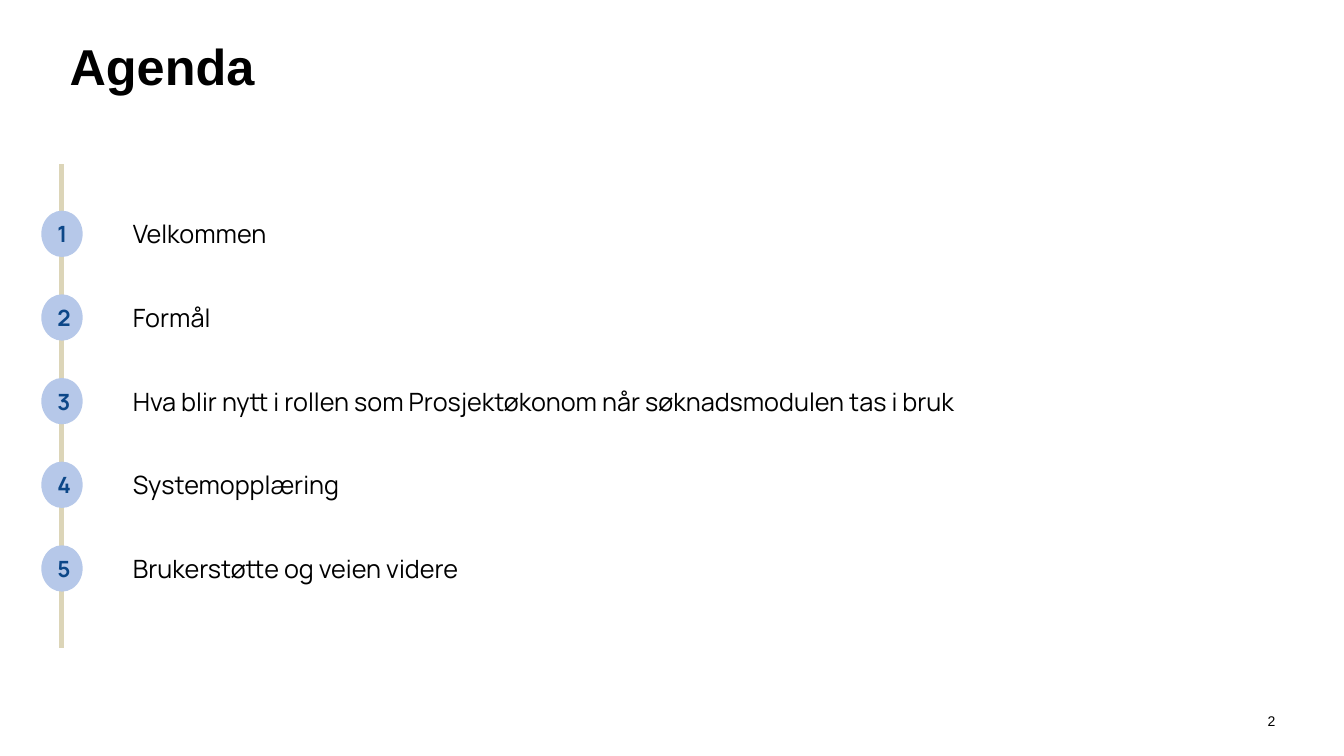
from lxml.etree import SubElement
from pptx import Presentation
from pptx.dml.color import RGBColor
from pptx.enum.shapes import MSO_CONNECTOR, MSO_SHAPE
from pptx.enum.text import MSO_ANCHOR, PP_ALIGN
from pptx.oxml.ns import qn
from pptx.util import Inches, Pt


def color(value):
    return RGBColor.from_string(value)


def write(shape, text, style, align=PP_ALIGN.LEFT, anchor=MSO_ANCHOR.TOP):
    frame = shape.text_frame
    frame.word_wrap = True
    frame.vertical_anchor = anchor
    para = frame.paragraphs[0]
    para.alignment = align
    span = para.add_run()
    span.text = text
    span.font.color.rgb = color(style["color"])
    for name in ("name", "size", "bold"):
        setattr(span.font, name, style[name])


title_style = {"name": "Arial", "size": Pt(36), "bold": True, "color": "000000"}
topic_style = {"name": "Manrope", "size": Pt(18), "bold": False, "color": "000000"}
marker_style = {"name": "Manrope", "size": Pt(16), "bold": True, "color": "0C4788"}
number_style = {"name": "Arial", "size": Pt(10), "bold": False, "color": "000000"}

topics = [
    "Velkommen",
    "Formål",
    "Hva blir nytt i rollen som Prosjektøkonom når søknadsmodulen tas i bruk",
    "Systemopplæring",
    "Brukerstøtte og veien videre",
]
first_marker_top = 2.09
first_topic_top = 2.12
row_pitch = 0.83

deck = Presentation()
deck.slide_width = Inches(13.33)
deck.slide_height = Inches(7.5)
page = deck.slides.add_slide(deck.slide_layouts[5])

# Title
title = page.shapes.title
title.left, title.top = Inches(0.59), Inches(0.3)
title.width, title.height = Inches(12), Inches(0.71)
write(title, "Agenda", title_style)

# Timeline
timeline = page.shapes.add_connector(
    MSO_CONNECTOR.STRAIGHT, Inches(0.61), Inches(1.63), Inches(0.61), Inches(6.43))
timeline.line.color.rgb = color("DCD5B8")
timeline.line.width = Pt(3)
SubElement(timeline.line._get_or_add_ln().getparent(), qn("a:effectLst"))

# Numbered markers and agenda topics
for row, topic in enumerate(topics):
    marker = page.shapes.add_shape(
        MSO_SHAPE.OVAL, Inches(0.41), Inches(first_marker_top + row * row_pitch),
        Inches(0.41), Inches(0.46))
    marker.shadow.inherit = False
    marker.fill.solid()
    marker.fill.fore_color.rgb = color("B6C8E9")
    marker.line.fill.background()
    write(marker, str(row + 1), marker_style, PP_ALIGN.CENTER, MSO_ANCHOR.MIDDLE)

    box = page.shapes.add_textbox(
        Inches(1.22), Inches(first_topic_top + row * row_pitch), Inches(9.2), Inches(0.4))
    write(box, topic, topic_style)

# Page number
page_number = page.shapes.add_textbox(Inches(12.36), Inches(7.02), Inches(0.5), Inches(0.4))
write(page_number, "2", number_style, PP_ALIGN.CENTER)

deck.save("out.pptx")
